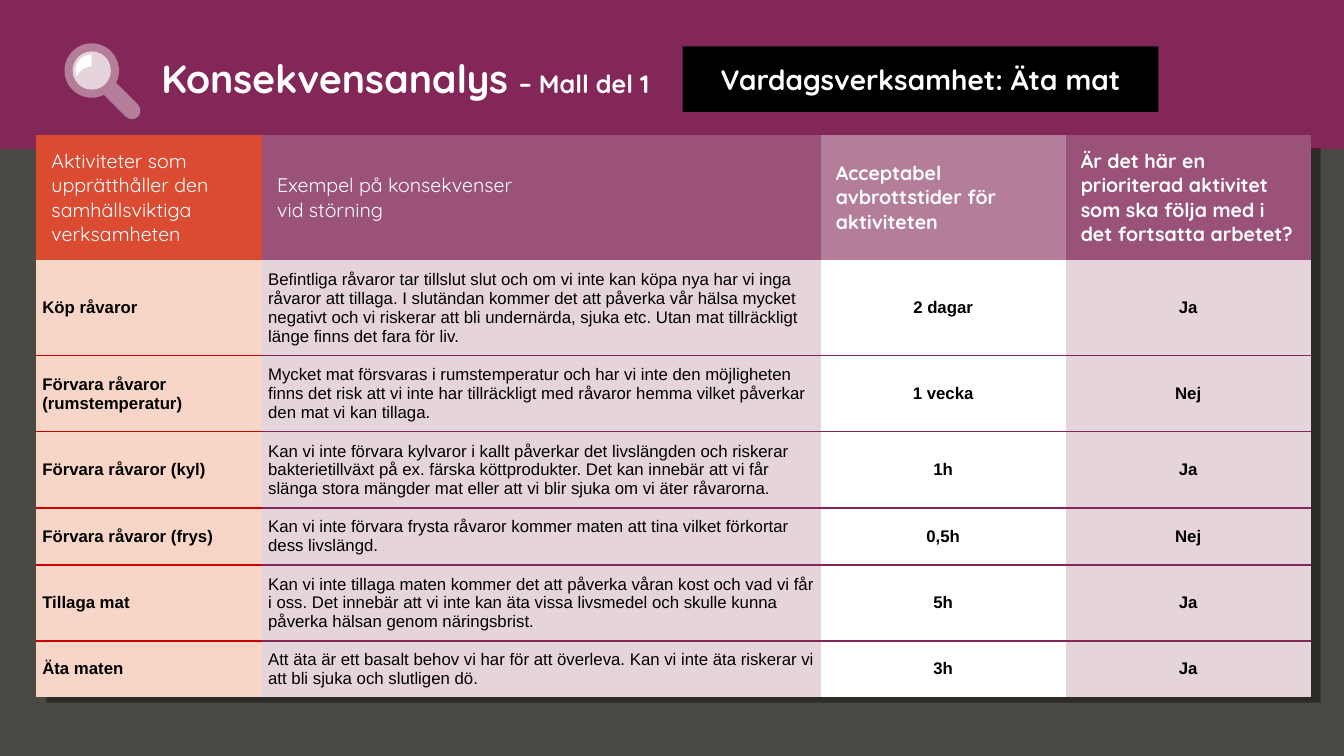
from math import cos, radians, sin

from lxml import etree
from pptx import Presentation
from pptx.dml.color import RGBColor
from pptx.enum.shapes import MSO_SHAPE
from pptx.enum.text import MSO_ANCHOR, MSO_AUTO_SIZE, PP_ALIGN
from pptx.oxml.ns import qn
from pptx.util import Inches, Pt

RECT, ROUND, OVAL = MSO_SHAPE.RECTANGLE, MSO_SHAPE.ROUNDED_RECTANGLE, MSO_SHAPE.OVAL
LEFT, CENTER = PP_ALIGN.LEFT, PP_ALIGN.CENTER
MIDDLE = MSO_ANCHOR.MIDDLE
NO_GRID = "{2D5ABB26-0587-4C30-8999-92F81FD0307C}"

PLUM, MAUVE, ROSE, PALE = "822757", "9B5279", "B47D9A", "E6D4DD"
ORANGE, PEACH, RED = "DB4B32", "F8D6C7", "CC0000"
WHITE, BLACK, GREY = "FFFFFF", "000000", "4A4944"

COLS = [2.24, 5.54, 2.43, 2.43]
ROWS = [1.24, 0.95, 0.755, 0.755, 0.565, 0.755, 0.555]
HEADS = [
    "Aktiviteter som upprätthåller den samhällsviktiga verksamheten",
    "Exempel på konsekvenser \vvid störning",
    "Acceptabel avbrottstider för aktiviteten",
    "Är det här en prioriterad aktivitet som ska följa med i det fortsatta arbetet?",
]
TASKS = [
    ("Köp råvaror",
     "Befintliga råvaror tar tillslut slut och om vi inte kan köpa nya har vi inga "
     "råvaror att tillaga. I slutändan kommer det att påverka vår hälsa mycket "
     "negativt och vi riskerar att bli undernärda, sjuka etc. Utan mat tillräckligt "
     "länge finns det fara för liv.", "2 dagar", "Ja"),
    ("Förvara råvaror (rumstemperatur)",
     "Mycket mat försvaras i rumstemperatur och har vi inte den möjligheten finns "
     "det risk att vi inte har tillräckligt med råvaror hemma vilket påverkar den "
     "mat vi kan tillaga.", "1 vecka", "Nej"),
    ("Förvara råvaror (kyl)",
     "Kan vi inte förvara kylvaror i kallt påverkar det livslängden och riskerar "
     "bakterietillväxt på ex. färska köttprodukter. Det kan innebär att vi får "
     "slänga stora mängder mat eller att vi blir sjuka om vi äter råvarorna.",
     "1h", "Ja"),
    ("Förvara råvaror (frys)",
     "Kan vi inte förvara frysta råvaror kommer maten att tina vilket förkortar "
     "dess livslängd.", "0,5h", "Nej"),
    ("Tillaga mat",
     "Kan vi inte tillaga maten kommer det att påverka våran kost och vad vi får i "
     "oss. Det innebär att vi inte kan äta vissa livsmedel och skulle kunna påverka "
     "hälsan genom näringsbrist.", "5h", "Ja"),
    ("Äta maten",
     "Att äta är ett basalt behov vi har för att överleva. Kan vi inte äta riskerar "
     "vi att bli sjuka och slutligen dö.", "3h", "Ja"),
]


def rgb(code):
    return RGBColor.from_string(code)


def paint(fill, code):
    fill.solid()
    fill.fore_color.rgb = rgb(code)


def arc(x, y, r, start, end):
    """Points along a circle, angles in degrees."""
    steps = 12
    turns = [radians(start + (end - start) * i / steps) for i in range(steps + 1)]
    return [(x + r * cos(t), y + r * sin(t)) for t in turns]


class Deck:
    head, body = "Quicksand", "Arial"

    def __init__(self):
        self.prs = Presentation()
        self.prs.slide_width, self.prs.slide_height = Inches(13.33), Inches(7.5)
        self.slide = self.prs.slides.add_slide(self.prs.slide_layouts[5])
        paint(self.slide.background.fill, GREY)

    def font(self, font, name, size, color, bold):
        font.name, font.size, font.bold = name, Pt(size), bold
        font.color.rgb = rgb(color)

    def finish(self, shape, color):
        paint(shape.fill, color)
        shape.line.fill.background()
        shape.shadow.inherit = False
        return shape

    def shape(self, kind, x, y, w, h, color):
        box = map(Inches, (x, y, w, h))
        return self.finish(self.slide.shapes.add_shape(kind, *box), color)

    def outline(self, points, color):
        dots = [(Inches(x), Inches(y)) for x, y in points]
        pen = self.slide.shapes.build_freeform(*dots[0])
        pen.add_line_segments(dots[1:], close=True)
        self.finish(pen.convert_to_shape(), color)

    def title(self, parts, x, y, w, h):
        title = self.slide.shapes.title
        tree = title._element.getparent()
        tree.append(title._element)  # in front of the band
        title.left, title.top, title.width, title.height = map(Inches, (x, y, w, h))
        frame = title.text_frame
        frame.auto_size, frame.vertical_anchor = MSO_AUTO_SIZE.NONE, MIDDLE
        para = frame.paragraphs[0]
        para.alignment, para.line_spacing = LEFT, 0.9
        for text, size in parts:
            run = para.add_run()
            run.text = text
            self.font(run.font, self.head, size, WHITE, True)

    def label(self, shape, text, size):
        frame = shape.text_frame
        frame.word_wrap, frame.vertical_anchor = True, MIDDLE
        para = frame.paragraphs[0]
        para.text, para.alignment = text, CENTER
        self.font(para.font, self.head, size, WHITE, True)

    def table(self, x, y, cols, rows):
        box = map(Inches, (x, y, sum(cols), sum(rows)))
        table = self.slide.shapes.add_table(len(rows), len(cols), *box).table
        table.first_row = table.horz_banding = False
        table._tbl.tblPr.find(qn("a:tableStyleId")).text = NO_GRID
        for col, width in zip(table.columns, cols):
            col.width = Inches(width)
        for row, height in zip(table.rows, rows):
            row.height = Inches(height)
        return table

    def cell(self, cell, text, fill, style, align, pad):
        cell.margin_left = cell.margin_right = Inches(pad[0])
        cell.margin_top = cell.margin_bottom = Inches(pad[1])
        cell.vertical_anchor = MIDDLE
        cell.text = text
        para = cell.text_frame.paragraphs[0]
        para.alignment = align
        self.font(para.font, *style)
        paint(cell.fill, fill)

    def rule(self, cell, side, color):
        line = etree.Element(qn("a:" + side), w=str(Pt(1)))
        fill = etree.SubElement(line, qn("a:solidFill"))
        etree.SubElement(fill, qn("a:srgbClr"), val=color)
        cell._tc.get_or_add_tcPr().insert(0, line)


def main():
    deck = Deck()

    # Header band with magnifier
    deck.shape(RECT, 0, 0, 13.33, 1.48, PLUM)
    grip = deck.shape(ROUND, 0.95, 0.9, 0.49, 0.17, ROSE)
    grip.adjustments[0] = 0.5
    grip.rotation = 45
    deck.shape(OVAL, 0.64, 0.43, 0.54, 0.54, ROSE)
    deck.shape(OVAL, 0.72, 0.51, 0.38, 0.38, PALE)
    deck.outline(arc(0.91, 0.7, 0.16, 162, 270) + arc(0.91, 0.82, 0.16, 270, 206), WHITE)

    # Title and topic
    deck.title([("Konsekvensanalys ", 28), ("– Mall del 1", 18)], 1.5, 0.52, 11.5, 0.56)
    topic = deck.shape(RECT, 6.77, 0.46, 4.72, 0.65, BLACK)
    deck.label(topic, "Vardagsverksamhet: Äta mat", 20)

    # Table shadow
    shade = deck.shape(RECT, 0.46, 1.47, 12.64, 5.5, BLACK)
    tint = shade.fill._xPr.find(qn("a:solidFill"))[0]
    etree.SubElement(tint, qn("a:alpha"), val="40000")

    # Table
    table = deck.table(0.36, 1.34, COLS, ROWS)
    for c, (text, fill) in enumerate(zip(HEADS, (ORANGE, MAUVE, ROSE, MAUVE))):
        style = (deck.head, 14, WHITE, c > 1)
        deck.cell(table.cell(0, c), text, fill, style, LEFT, (0.15, 0.13))
    for r, task in enumerate(TASKS, 1):
        for c, (text, fill) in enumerate(zip(task, (PEACH, PALE, WHITE, PALE))):
            cell = table.cell(r, c)
            style = (deck.body, 12, BLACK, c != 1)
            deck.cell(cell, text, fill, style, CENTER if c > 1 else LEFT, (0.06, 0.08))
            color = PLUM if c else RED
            if r < len(TASKS):
                deck.rule(cell, "lnB", color)
            if r > 1:
                deck.rule(cell, "lnT", color)

    deck.prs.save("out.pptx")


if __name__ == "__main__":
    main()
